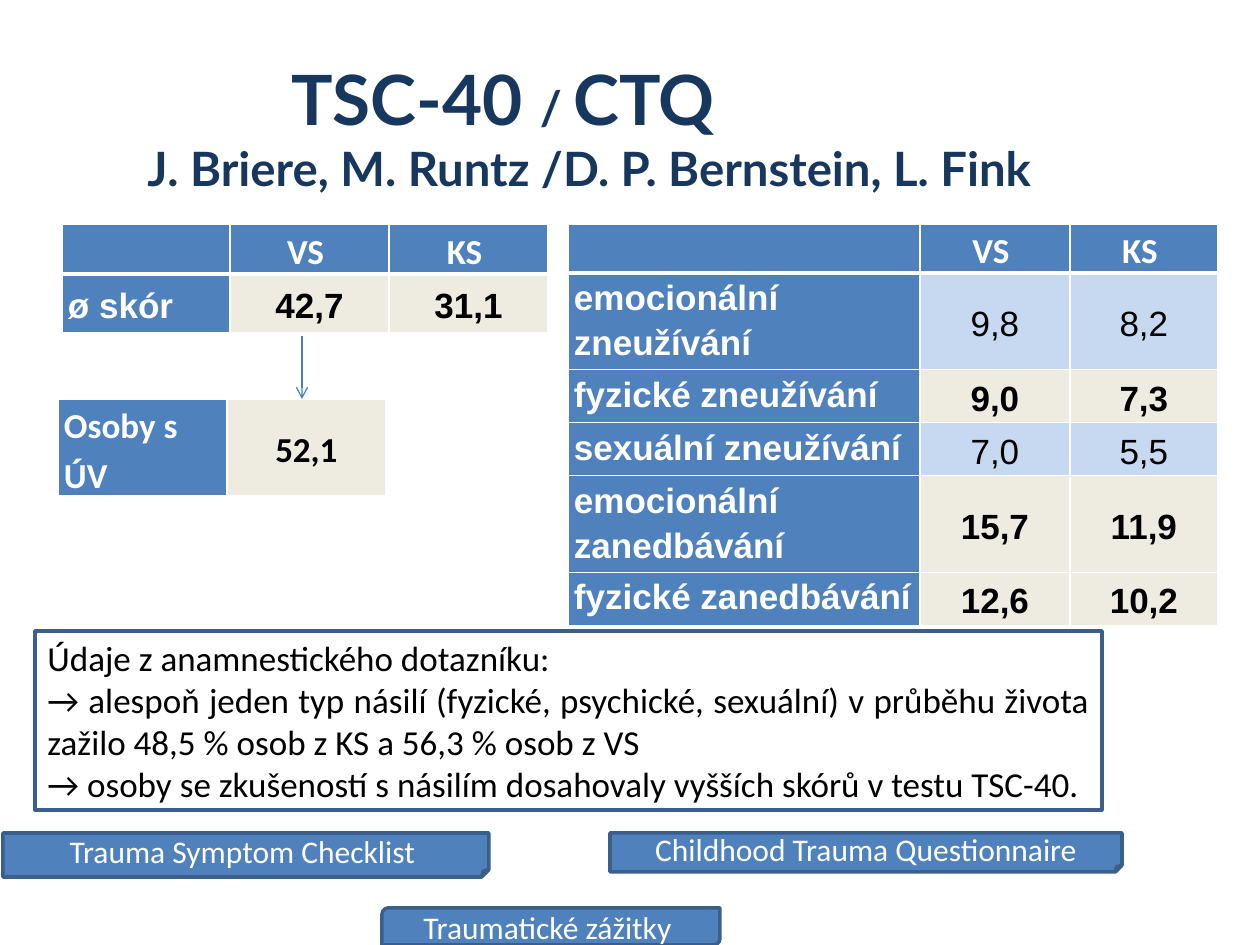
import pptx
import pptx.dml.color
import pptx.enum.dml
import pptx.enum.shapes
import pptx.enum.text
import pptx.oxml
import pptx.oxml.ns
import pptx.util
from lxml import etree

SCALE = 914400 / 126  # EMU in one px
BLUE, BEIGE, PALE = "4F81BD", "EEECE1", "C6D9F1"
OUTLINE, NAVY, WHITE, BLACK = "3A5F8C", "17375E", "FFFFFF", "000000"
ALIGN = pptx.enum.text.PP_ALIGN
ANCHOR = pptx.enum.text.MSO_ANCHOR
SHAPE = pptx.enum.shapes.MSO_SHAPE


def px(length):
    return pptx.util.Emu(round(length * SCALE))


def colour(value):
    return pptx.dml.color.RGBColor.from_string(value)


def add_span(para, text, size, font, ink, bold=False):
    span = para.add_run()
    span.text = text
    span.font.size = pptx.util.Pt(size)
    span.font.name = font
    span.font.bold = bold
    span.font.color.rgb = colour(ink)


def add_title(page):
    box = page.shapes.add_textbox(px(63), px(38), px(1134), px(176))
    frame = box.text_frame
    frame.word_wrap = True
    frame.vertical_anchor = ANCHOR.MIDDLE
    lines = [
        (216, [("TSC-40 ", 39.6), ("/ ", 27), ("CTQ", 39.6)]),
        (72, [("J. Briere, M. Runtz /D. P. Bernstein, L. Fink", 27)]),
    ]
    for number, (indent, spans) in enumerate(lines):
        para = frame.add_paragraph() if number else frame.paragraphs[0]
        para._p.get_or_add_pPr().set("marL", str(px(indent)))
        for text, size in spans:
            add_span(para, text, size, "Lato", NAVY, True)


def add_panel(page, kind, place, lines, size, align, fill=BLUE, ink=WHITE):
    panel = page.shapes.add_shape(kind, *map(px, place))
    panel.shadow.inherit = False
    panel.fill.solid()
    panel.fill.fore_color.rgb = colour(fill)
    panel.line.color.rgb = colour(OUTLINE)
    panel.line.width = pptx.util.Pt(2)
    frame = panel.text_frame
    frame.word_wrap = True
    frame.vertical_anchor = ANCHOR.MIDDLE
    for number, text in enumerate(lines):
        para = frame.add_paragraph() if number else frame.paragraphs[0]
        para.alignment = align
        add_span(para, text, size, "Calibri", ink)


def set_borders(cell, bottom):
    properties = cell._tc.get_or_add_tcPr()
    for index, side in enumerate("LRTB"):
        width = bottom if side == "B" else 1
        edge = pptx.oxml.parse_xml(
            f'<a:ln{side} {pptx.oxml.ns.nsdecls("a")} w="{pptx.util.Pt(width)}">'
            f'<a:solidFill><a:srgbClr val="{WHITE}"/></a:solidFill></a:ln{side}>')
        properties.insert(index, edge)


def fill_cell(cell, text, fill, font, ink, bold, align, anchor, bottom):
    cell.margin_left = cell.margin_right = px(6)
    cell.margin_top = cell.margin_bottom = 0
    cell.vertical_anchor = anchor
    cell.fill.solid()
    cell.fill.fore_color.rgb = colour(fill)
    set_borders(cell, bottom)
    para = cell.text_frame.paragraphs[0]
    para.alignment = align
    para.line_spacing = 1.15
    if text:
        add_span(para, text, 20, font, ink, bold)


def add_grid(page, left, top, widths, heights, rows, header=True,
             font="Arial", label_anchor=ANCHOR.MIDDLE, plain_rows=()):
    """The header row and label column are blue; plain rows are pale, not bold."""
    table = page.shapes.add_table(len(rows), len(widths), px(left), px(top),
                                  px(sum(widths)), px(sum(heights))).table
    for column, width in zip(table.columns, widths):
        column.width = px(width)
    for r, (height, row) in enumerate(zip(heights, rows)):
        table.rows[r].height = px(height)
        heading = header and r == 0
        plain = r in plain_rows
        for c, text in enumerate(row):
            label = c == 0
            blue = heading or label
            fill_cell(
                table.cell(r, c), text,
                fill=BLUE if blue else PALE if plain else BEIGE,
                font="Calibri" if heading else font,
                ink=WHITE if blue else BLACK,
                bold=blue or not plain,
                align=ALIGN.LEFT if label else ALIGN.CENTER,
                anchor=label_anchor if label else ANCHOR.MIDDLE,
                bottom=3 if heading else 1)


def add_arrow(page, x, top, bottom):
    arrow = page.shapes.add_connector(
        pptx.enum.shapes.MSO_CONNECTOR.STRAIGHT, px(x), px(top), px(x), px(bottom))
    arrow.line.color.rgb = colour("4B7EBC")
    arrow.line.width = pptx.util.Pt(0.75)
    tail = etree.SubElement(arrow.line._get_or_add_ln(), pptx.oxml.ns.qn("a:tailEnd"))
    tail.set("type", "arrow")
    etree.SubElement(arrow._element.spPr, pptx.oxml.ns.qn("a:effectLst"))


def main():
    deck = pptx.Presentation()
    deck.slide_width, deck.slide_height = px(1260), px(945)
    page = deck.slides.add_slide(deck.slide_layouts[6])
    add_title(page)

    # Score tables
    heads = ["", "VS ", "KS "]
    add_grid(page, 568, 224, [352, 150, 148], [49, 91, 53, 53, 90, 53], [
        heads,
        ["emocionální zneužívání", "9,8", "8,2"],
        ["fyzické zneužívání", "9,0", "7,3"],
        ["sexuální zneužívání", "7,0", "5,5"],
        ["emocionální zanedbávání", "15,7", "11,9"],
        ["fyzické zanedbávání", "12,6", "10,2"],
    ], label_anchor=ANCHOR.TOP, plain_rows=(1, 3))
    add_grid(page, 62, 224, [168, 159, 159], [50, 59],
             [heads, ["ø skór", "42,7", "31,1"]])
    add_grid(page, 58, 399, [169, 159], [97],
             [["Osoby s ÚV", "52,1"]], header=False, font="Calibri")
    add_arrow(page, 302, 336, 399)

    # Findings from the questionnaire
    add_panel(page, SHAPE.RECTANGLE, (35, 631, 1067, 179), [
        "Údaje z anamnestického dotazníku: ",
        "→ alespoň jeden typ násilí (fyzické, psychické, sexuální) v průběhu života "
        "zažilo 48,5 % osob z KS a 56,3 % osob z VS",
        "→ osoby se zkušeností s násilím dosahovaly vyšších skórů v testu TSC-40.",
    ], 20, ALIGN.JUSTIFY, WHITE, BLACK)

    # Labels at the foot
    labels = [
        (SHAPE.FOLDED_CORNER, (3, 833, 486, 44), "Trauma Symptom Checklist "),
        (SHAPE.FOLDED_CORNER, (610, 833, 512, 39), "Childhood Trauma Questionnaire"),
        (SHAPE.ROUND_2_DIAG_RECTANGLE, (382, 908, 338, 37), "Traumatické zážitky "),
    ]
    for kind, place, text in labels:
        add_panel(page, kind, place, [text], 18, ALIGN.CENTER)

    deck.save("out.pptx")


if __name__ == "__main__":
    main()
